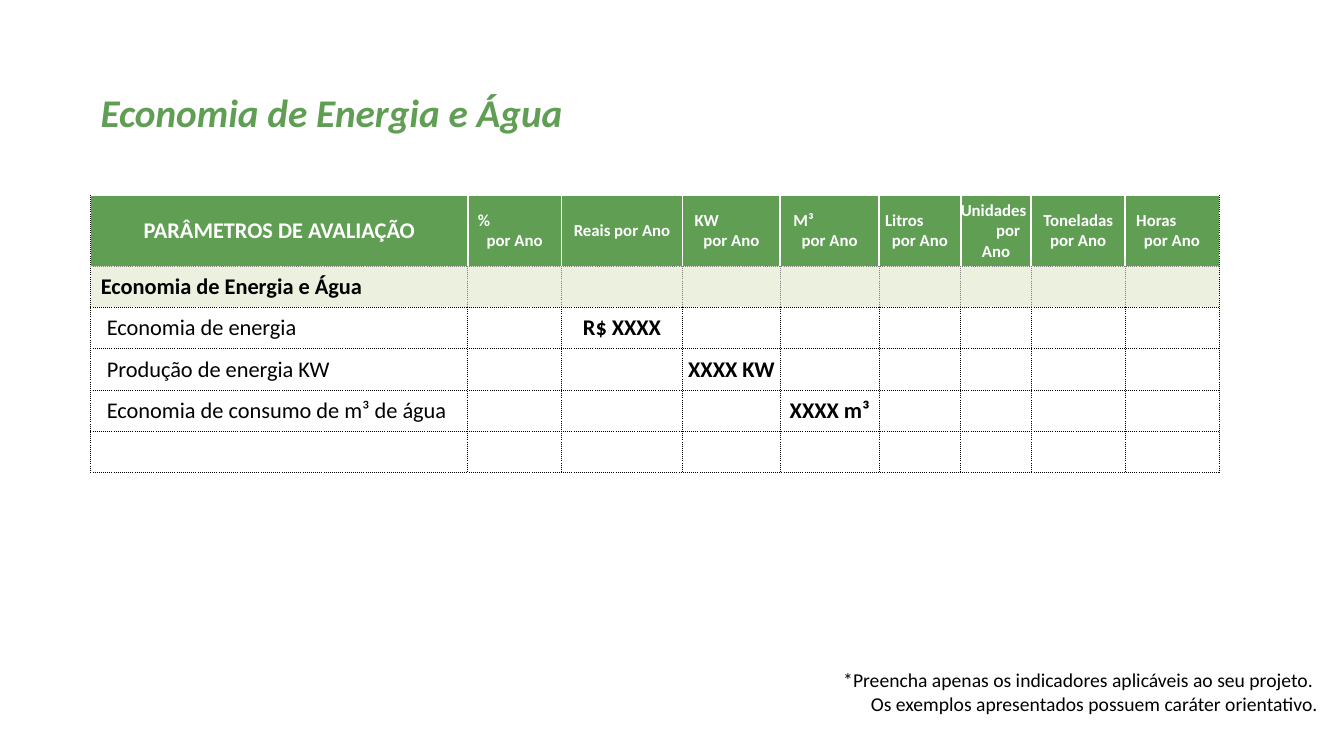
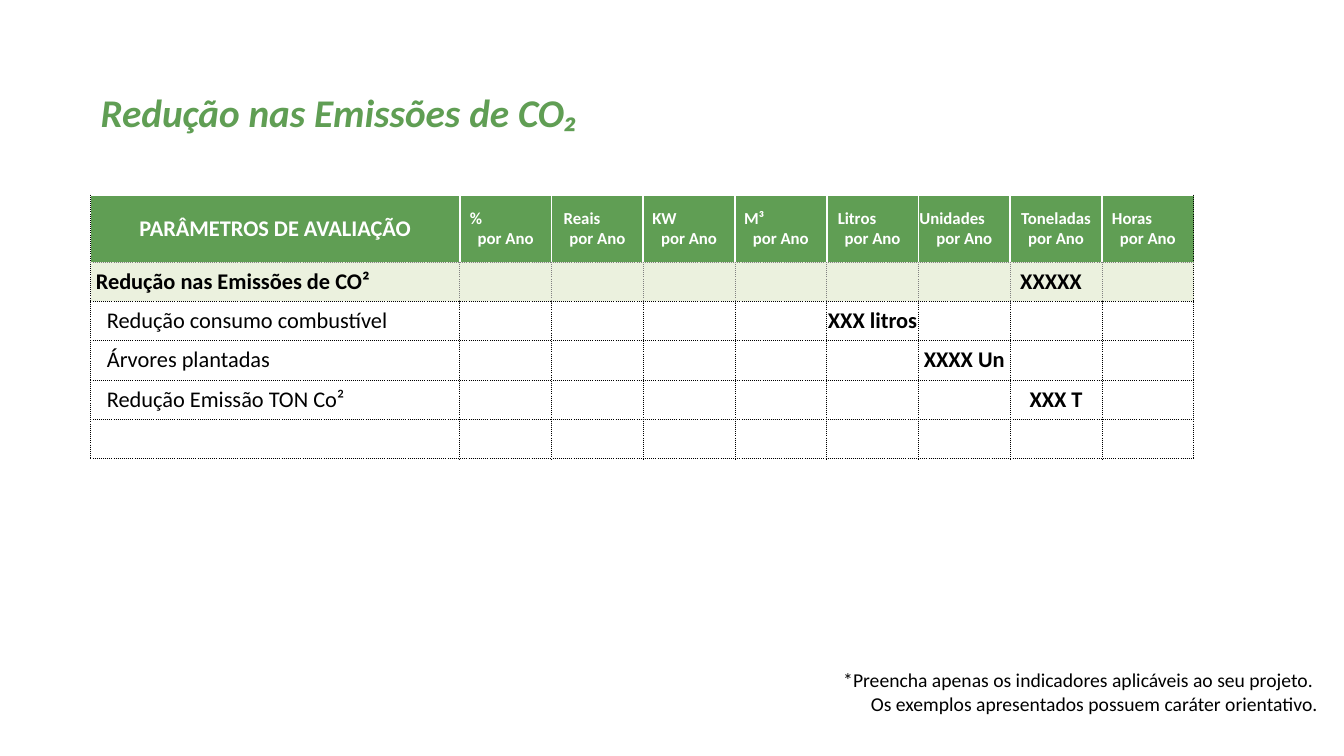
import pptx
import pptx.util
import pptx.dml.color
import pptx.enum.text
import pptx.oxml.ns
import lxml.etree

PX = 9144
FONT = "Calibri"
GREEN, PALE, WHITE, BLACK, GREY = "609E54", "EBF1DE", "FFFFFF", "000000", "808080"
CENTRED = None
ANNUAL = ("por Ano", CENTRED)
HEADING = [("PARÂMETROS DE AVALIAÇÃO", CENTRED)]
TONNES = [("Toneladas", CENTRED), ANNUAL]
NOTE = ("*Preencha apenas os indicadores aplicáveis ao seu projeto. \n"
        "Os exemplos apresentados possuem caráter orientativo.")

SLIDES = [
    {
        "title": "Economia de Energia e Água",
        "columns": [374, 93, 120, 97, 98, 81, 70, 93, 93],
        "rows": [70] + [41] * 5,
        "units": [
            [("%", 10), ANNUAL],
            [("Reais por Ano", CENTRED)],
            [("KW", 12), ANNUAL],
            [("M³", 13), ANNUAL],
            [("Litros", 6), ANNUAL],
            [("Unidades", 0), ("por", 35), ("Ano", CENTRED)],
            TONNES,
            [("Horas", 11), ANNUAL],
        ],
        "section": ("Economia de Energia e Água", 10),
        "labels": ["Economia de energia", "Produção de energia KW",
                   "Economia de consumo de m³ de água"],
        "values": {(2, 2): ("R$ XXXX", CENTRED), (3, 3): ("XXXX KW", CENTRED),
                   (4, 4): ("XXXX m³", CENTRED)},
    },
    {
        "title": "Redução nas Emissões de CO₂",
        "columns": [366] + [91] * 8,
        "rows": [66] + [39] * 5,
        "units": [
            [("%", 10), ANNUAL],
            [("Reais", 12), ANNUAL],
            [("KW", 9), ANNUAL],
            [("M³", 9), ANNUAL],
            [("Litros", 11), ANNUAL],
            [("Unidades", 1), ANNUAL],
            TONNES,
            [("Horas", 10), ANNUAL],
        ],
        "section": ("Redução nas Emissões de CO²", 5),
        "labels": ["Redução consumo combustível", "Árvores plantadas",
                   "Redução Emissão TON Co²"],
        "values": {(1, 7): ("XXXXX", 10), (2, 5): ("XXX litros", CENTRED),
                   (3, 6): ("XXXX Un", CENTRED), (4, 7): ("XXX T", CENTRED)},
    },
]


def colour(value):
    return pptx.dml.color.RGBColor.from_string(value)


def style(para, size, ink, bold=False, italic=False):
    font = para.font
    font.name, font.size = FONT, pptx.util.Pt(size)
    font.bold, font.italic = bold, italic
    font.color.rgb = colour(ink)


def add_text(page, area, text):
    box = page.shapes.add_textbox(*(n * PX for n in area))
    frame = box.text_frame
    frame.word_wrap = True
    frame.auto_size = pptx.enum.text.MSO_AUTO_SIZE.SHAPE_TO_FIT_TEXT
    frame.paragraphs[0].text = text
    return frame.paragraphs[0]


def write_lines(cell, lines, size, ink, bold):
    frame = cell.text_frame
    for number, (text, offset) in enumerate(lines):
        para = frame.add_paragraph() if number else frame.paragraphs[0]
        para.text = text
        if offset is CENTRED:
            para.alignment = pptx.enum.text.PP_ALIGN.CENTER
        else:
            para.alignment = pptx.enum.text.PP_ALIGN.LEFT
            properties = para._p.get_or_add_pPr()
            properties.set("marL", str(offset * PX))
            properties.set("indent", "0")
        style(para, size, ink, bold)


def add_borders(cell, left, right, top, bottom):
    properties = cell._tc.get_or_add_tcPr()
    qn = pptx.oxml.ns.qn
    for side, ink in zip("LRTB", (left, right, top, bottom)):
        points = 1.5 if ink == WHITE else 0.5
        line = lxml.etree.SubElement(properties, qn(f"a:ln{side}"), w=str(pptx.util.Pt(points)))
        solid = lxml.etree.SubElement(line, qn("a:solidFill"))
        lxml.etree.SubElement(solid, qn("a:srgbClr"), val=ink)
        dash = "solid" if ink == WHITE else "dot"
        lxml.etree.SubElement(line, qn("a:prstDash"), val=dash)


def cell_lines(content, row, column):
    if row == 0:
        return content["units"][column - 1] if column else HEADING
    if column:
        return [content["values"].get((row, column), ("", CENTRED))]
    if row == 1:
        return [content["section"]]
    labels = dict(enumerate(content["labels"], 2))
    return [(labels.get(row, ""), 16)]


def add_indicators(page, content):
    columns, rows = content["columns"], content["rows"]
    table = page.shapes.add_table(len(rows), len(columns), 90 * PX, 194 * PX,
                                  sum(columns) * PX, sum(rows) * PX).table
    table.first_row = table.horz_banding = False
    for column, width in zip(table.columns, columns):
        column.width = width * PX
    for row, height in zip(table.rows, rows):
        row.height = height * PX

    row_styles = {0: (GREEN, WHITE, WHITE, GREY), 1: (PALE, GREY, GREY, BLACK)}
    last = len(columns) - 1
    for r in range(len(rows)):
        fill, inner, top, bottom = row_styles.get(r, (WHITE, BLACK, BLACK, BLACK))
        for c in range(len(columns)):
            cell = table.cell(r, c)
            cell.margin_left = cell.margin_right = cell.margin_top = cell.margin_bottom = 0
            cell.vertical_anchor = pptx.enum.text.MSO_ANCHOR.MIDDLE
            add_borders(cell, inner if c else BLACK, inner if c < last else BLACK, top, bottom)
            cell.fill.solid()
            cell.fill.fore_color.rgb = colour(fill)
            write_lines(cell, cell_lines(content, r, c),
                        size=12 if r == 0 and c else 16,
                        ink=BLACK if r else WHITE,
                        bold=r < 2 or c > 0)


def main():
    deck = pptx.Presentation()
    deck.slide_width, deck.slide_height = 1333 * PX, 750 * PX
    for content in SLIDES:
        page = deck.slides.add_slide(deck.slide_layouts[6])
        add_indicators(page, content)
        title = add_text(page, (90, 76, 1079, 61), content["title"])
        title.line_spacing = 1.15
        style(title, 28, GREEN, bold=True, italic=True)
        note = add_text(page, (650, 658, 667, 57), NOTE)
        note.alignment = pptx.enum.text.PP_ALIGN.RIGHT
        style(note, 14, BLACK)
    deck.save("out.pptx")


if __name__ == "__main__":
    main()
